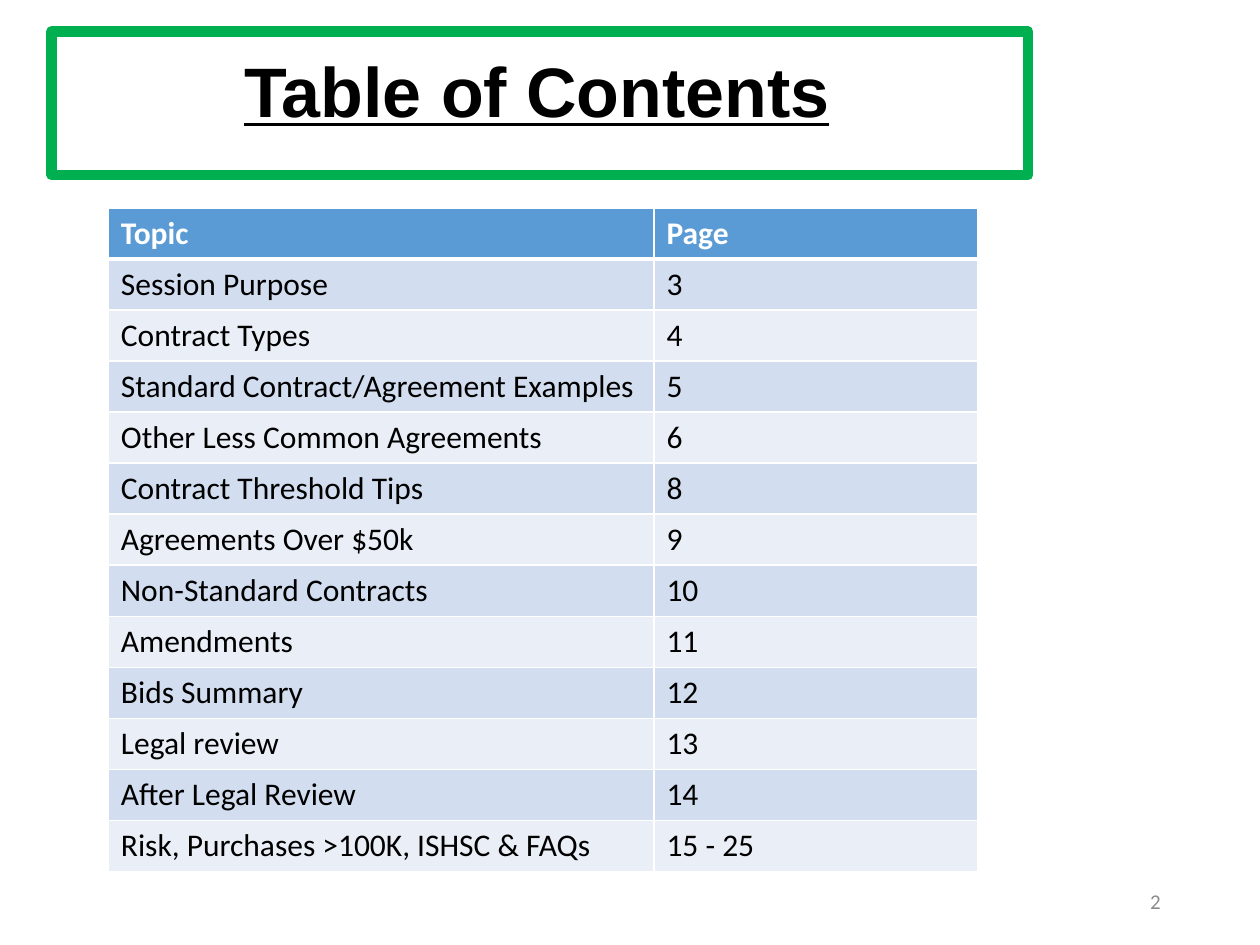
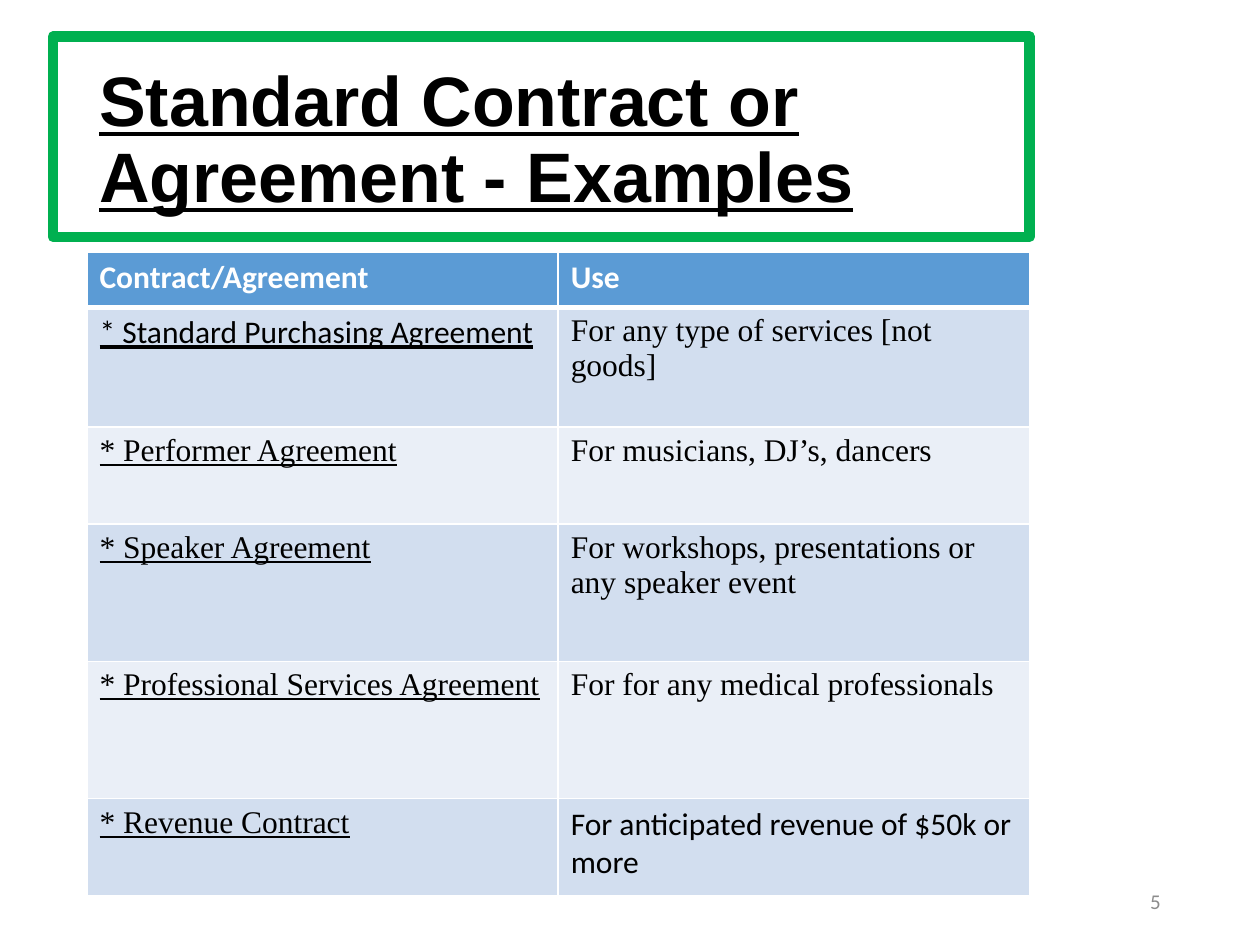
from dataclasses import dataclass

from lxml import etree
from pptx import Presentation
from pptx.dml.color import RGBColor
from pptx.enum.shapes import MSO_SHAPE
from pptx.enum.text import MSO_ANCHOR, PP_ALIGN
from pptx.oxml.ns import qn
from pptx.util import Inches, Pt

RECTANGLE = MSO_SHAPE.RECTANGLE
MIDDLE = MSO_ANCHOR.MIDDLE
RIGHT = PP_ALIGN.RIGHT


@dataclass(frozen=True)
class Theme:
    title_font: str = "Arial"
    body_font: str = "Calibri"
    serif_font: str = "Times New Roman"
    title_size: int = 40
    body_size: int = 18
    number_size: int = 12
    frame_width: int = 6
    grid_width: int = 1
    header_rule: int = 3
    ink: str = "000000"
    white: str = "FFFFFF"
    header: str = "5B9BD5"
    bands: tuple = ("D2DEEF", "EAEFF7")
    frame: str = "00B050"
    number: str = "8C8C8C"


THEME = Theme()
SANS, SERIF = THEME.body_font, THEME.serif_font

# Each row holds its cell texts; fonts lists the exceptions by (row, column).
SLIDES = [
    dict(
        title="Table of Contents",
        title_at=(1.84, 0.32, 6.76, 0.86),
        frame_at=(0.41, 0.25, 7.75, 1.14),
        table_at=(0.86, 1.65),
        columns=(4.33, 2.57),
        heights=[5.27 / 13] * 13,
        rows=[
            ("Topic", "Page"),
            ("Session Purpose", "3"),
            ("Contract Types", "4"),
            ("Standard Contract/Agreement Examples", "5"),
            ("Other Less Common Agreements", "6"),
            ("Contract Threshold Tips", "8"),
            ("Agreements Over $50k", "9"),
            ("Non-Standard Contracts", "10"),
            ("Amendments", "11"),
            ("Bids Summary", "12"),
            ("Legal review", "13"),
            ("After Legal Review", "14"),
            ("Risk, Purchases >100K, ISHSC & FAQs", "15 - 25"),
        ],
        body_font=SANS,
        fonts={},
        underline_first=False,
        number="2",
    ),
    dict(
        title="Standard Contract or Agreement - Examples",
        title_at=(0.69, 0.4, 7.64, 1.45),
        frame_at=(0.42, 0.29, 7.75, 1.59),
        table_at=(0.69, 2),
        columns=(3.74, 3.74),
        heights=[0.44, 0.95, 0.77, 1.09, 1.09, 0.77],
        rows=[
            ("Contract/Agreement", "Use"),
            ("* Standard Purchasing Agreement", "For any type of services [not goods]"),
            ("* Performer Agreement", "For musicians, DJ’s, dancers"),
            ("* Speaker Agreement", "For workshops, presentations or any speaker event"),
            ("* Professional Services Agreement", "For for any medical professionals"),
            ("* Revenue Contract", "For anticipated revenue of $50k or more"),
        ],
        body_font=SERIF,
        fonts={(1, 0): SANS, (5, 1): SANS},
        underline_first=True,
        number="5",
    ),
]


def add_span(para, text, font, size, color, bold=False, underline=False):
    span = para.add_run()
    span.text = text
    span.font.name = font
    span.font.size = Pt(size)
    span.font.color.rgb = RGBColor.from_string(color)
    span.font.bold = bold
    span.font.underline = underline


def add_borders(cell, top, bottom):
    """Draw white cell edges; call before filling, as the schema puts lines first."""
    properties = cell._tc.get_or_add_tcPr()
    widths = {"L": THEME.grid_width, "R": THEME.grid_width, "T": top, "B": bottom}
    for side, width in widths.items():
        line = etree.SubElement(properties, qn(f"a:ln{side}"), w=str(Pt(width)))
        fill = etree.SubElement(line, qn("a:solidFill"))
        etree.SubElement(fill, qn("a:srgbClr"), val=THEME.white)


deck = Presentation()
deck.slide_width = Inches(10)
deck.slide_height = Inches(7.5)

for content in SLIDES:
    page = deck.slides.add_slide(deck.slide_layouts[6])

    # Title
    title = page.shapes.add_textbox(*map(Inches, content["title_at"]))
    title.text_frame.word_wrap = True
    title.text_frame.vertical_anchor = MIDDLE
    para = title.text_frame.paragraphs[0]
    para.line_spacing = 0.9
    add_span(para, content["title"], THEME.title_font, THEME.title_size,
             THEME.ink, bold=True, underline=True)

    # Table
    rows, columns, heights = content["rows"], content["columns"], content["heights"]
    left, top = content["table_at"]
    table = page.shapes.add_table(
        len(rows), len(columns), Inches(left), Inches(top),
        Inches(sum(columns)), Inches(sum(heights))).table
    for column, width in zip(table.columns, columns):
        column.width = Inches(width)
    for row_index, texts in enumerate(rows):
        table.rows[row_index].height = Inches(heights[row_index])
        is_header = row_index == 0
        band = THEME.header if is_header else THEME.bands[(row_index - 1) % 2]
        top_rule = THEME.header_rule if row_index == 1 else THEME.grid_width
        bottom_rule = THEME.header_rule if is_header else THEME.grid_width
        for column_index, text in enumerate(texts):
            cell = table.cell(row_index, column_index)
            add_borders(cell, top_rule, bottom_rule)
            cell.fill.solid()
            cell.fill.fore_color.rgb = RGBColor.from_string(band)
            font = SANS if is_header else content["fonts"].get(
                (row_index, column_index), content["body_font"])
            underline = content["underline_first"] and column_index == 0 and not is_header
            add_span(cell.text_frame.paragraphs[0], text, font, THEME.body_size,
                     THEME.white if is_header else THEME.ink,
                     bold=is_header, underline=underline)

    # Title frame
    frame = page.shapes.add_shape(RECTANGLE, *map(Inches, content["frame_at"]))
    frame.shadow.inherit = False
    frame.fill.background()
    frame.line.color.rgb = RGBColor.from_string(THEME.frame)
    frame.line.width = Pt(THEME.frame_width)

    # Page number
    number = page.shapes.add_textbox(Inches(7.06), Inches(6.95), Inches(2.25), Inches(0.4))
    number.text_frame.word_wrap = True
    number.text_frame.vertical_anchor = MIDDLE
    para = number.text_frame.paragraphs[0]
    para.alignment = RIGHT
    add_span(para, content["number"], SANS, THEME.number_size, THEME.number)

deck.save("out.pptx")
